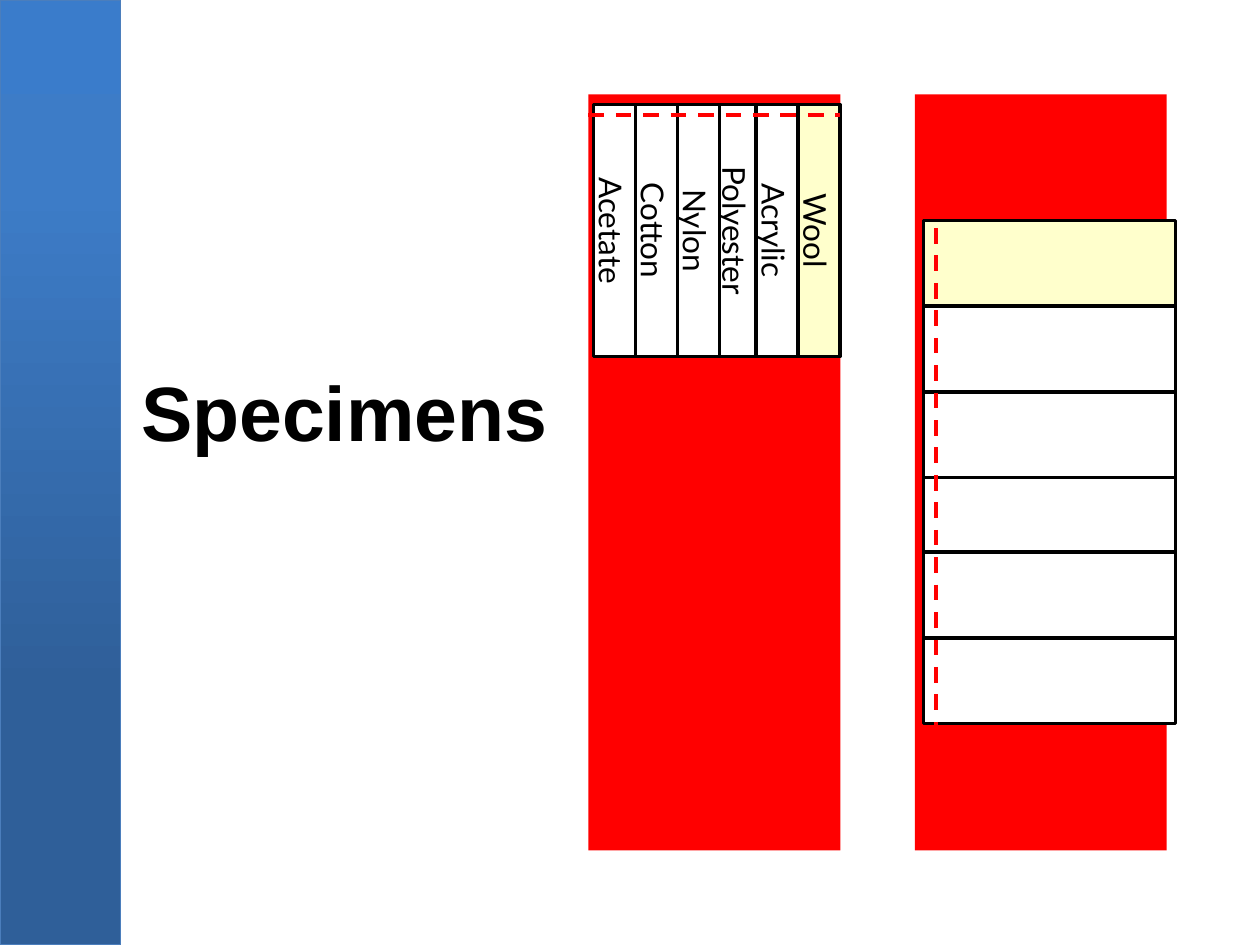
from copy import deepcopy
from dataclasses import dataclass

from lxml import etree
from pptx import Presentation
from pptx.dml.color import RGBColor
from pptx.enum.dml import MSO_LINE
from pptx.enum.shapes import MSO_CONNECTOR, MSO_SHAPE
from pptx.enum.text import MSO_ANCHOR, PP_ALIGN
from pptx.oxml.ns import qn
from pptx.util import Inches, Pt

RECT = MSO_SHAPE.RECTANGLE
LINE = MSO_CONNECTOR.STRAIGHT
DASH = MSO_LINE.DASH
TOP, MIDDLE = MSO_ANCHOR.TOP, MSO_ANCHOR.MIDDLE
CENTER = PP_ALIGN.CENTER


@dataclass(frozen=True)
class Theme:
    black: str = "000000"
    white: str = "FFFFFF"
    red: str = "FF0000"
    cream: str = "FFFFCC"
    edge: str = "4B7EBC"
    blues: tuple = ((0, "2F5F99"), (0.27, "2F5F99"), (0.8, "3D7CC7"), (1, "3A7CCB"))
    head: str = "Arial"
    body: str = "Lato"
    head_size: int = 44
    body_size: int = 18


THEME = Theme()
WIDTH, HEIGHT = 10, 7.5
TITLE = "Specimens"
# Fibre, fill, anchor of its label, place in strip widths from the first
FIBRES = [
    ("Wool", THEME.cream, TOP, 0),
    ("Acrylic", THEME.white, TOP, 1),
    ("Polyester", THEME.white, MIDDLE, 2),
    ("Nylon", THEME.white, TOP, 2.87),
    ("Cotton", THEME.white, TOP, 3.87),
    ("Acetate", THEME.white, TOP, 4.87),
]
LONG = 2            # length of every strip, and width of a band
BAND = 6            # length of a band
THIN, WIDE = 1 / 3, 0.68
BANDS = (5.67, 8.26)
MID = HEIGHT / 2
WOOL_X, LABEL_Y = 6.5, 1.83
ROW_X, WOOL_Y = 8.33, 2.09
SEAMS = [((4.67, 0.91), (6.67, 0.91)), ((7.43, 1.81), (7.43, 5.81))]


def rgb(code):
    return RGBColor.from_string(code)


def box(shapes, mid, size, turn=0, fill=None, edge=None, width=2):
    """Add a rectangle about its centre, turned by some degrees."""
    (x, y), (w, h) = mid, size
    item = shapes.add_shape(
        RECT, Inches(x - w / 2), Inches(y - h / 2), Inches(w), Inches(h))
    item.rotation = turn
    item.shadow.inherit = False
    if fill:
        item.fill.solid()
        item.fill.fore_color.rgb = rgb(fill)
    if edge:
        item.line.color.rgb = rgb(edge)
        item.line.width = Pt(width)
    else:
        item.line.fill.background()
    return item


def write(frame, text, face, size, anchor, bold=False):
    frame.vertical_anchor = anchor
    para = frame.paragraphs[0]
    para.alignment = CENTER
    run = para.add_run()
    run.text = text
    font = run.font
    font.name, font.size, font.bold = face, Pt(size), bold
    font.color.rgb = rgb(THEME.black)


def shade(fill, stops):
    """Fill with a gradient that runs from bottom to top."""
    fill.gradient()
    fill.gradient_angle = 90
    first = fill.gradient_stops[0]
    first.color.rgb = rgb(THEME.white)
    nodes = fill._fill._gradFill.find(qn("a:gsLst"))
    model = deepcopy(nodes[0])
    for node in list(nodes):
        nodes.remove(node)
    for _ in stops:
        nodes.append(deepcopy(model))
    for stop, (place, code) in zip(fill.gradient_stops, stops):
        stop.position = place
        stop.color.rgb = rgb(code)


def side(slide):
    bar = box(slide.shapes, (0.48, MID), (0.96, HEIGHT),
              edge=THEME.edge, width=0.75)
    shade(bar.fill, THEME.blues)


def title(slide):
    head = slide.shapes.title
    head.left, head.top = Inches(0.97), Inches(2.86)
    head.width, head.height = Inches(3.53), Inches(0.8)
    write(head.text_frame, TITLE, THEME.head, THEME.head_size, MIDDLE, True)


def band(slide, x):
    box(slide.shapes, (x, MID), (BAND, LONG), 90, THEME.red)


def labels(slide):
    group = slide.shapes.add_group_shape()
    for name, fill, anchor, place in FIBRES:
        strip = box(group.shapes, (WOOL_X - place * THIN, LABEL_Y),
                    (LONG, THIN), 90, fill, THEME.black)
        frame = strip.text_frame
        frame.margin_left = frame.margin_right = Inches(0.04)
        frame.margin_top = frame.margin_bottom = Inches(0.04)
        frame.word_wrap = True
        write(frame, name, THEME.body, THEME.body_size, anchor)


def rows(slide):
    group = slide.shapes.add_group_shape()
    for _, fill, _, place in reversed(FIBRES):
        box(group.shapes, (ROW_X, WOOL_Y + place * WIDE),
            (LONG, WIDE), 180, fill, THEME.black)


def seam(slide, start, end):
    ends = [Inches(value) for value in start + end]
    item = slide.shapes.add_connector(LINE, *ends)
    item.line.color.rgb = rgb(THEME.red)
    item.line.width = Pt(2.25)
    item.line.dash_style = DASH
    etree.SubElement(item._element.spPr, qn("a:effectLst"))


def main():
    deck = Presentation()
    deck.slide_width, deck.slide_height = Inches(WIDTH), Inches(HEIGHT)
    slide = deck.slides.add_slide(deck.slide_layouts[5])
    side(slide)
    title(slide)
    for x, strips in zip(BANDS, (labels, rows)):
        band(slide, x)
        strips(slide)
    for start, end in SEAMS:
        seam(slide, start, end)
    deck.save("out.pptx")


if __name__ == "__main__":
    main()
